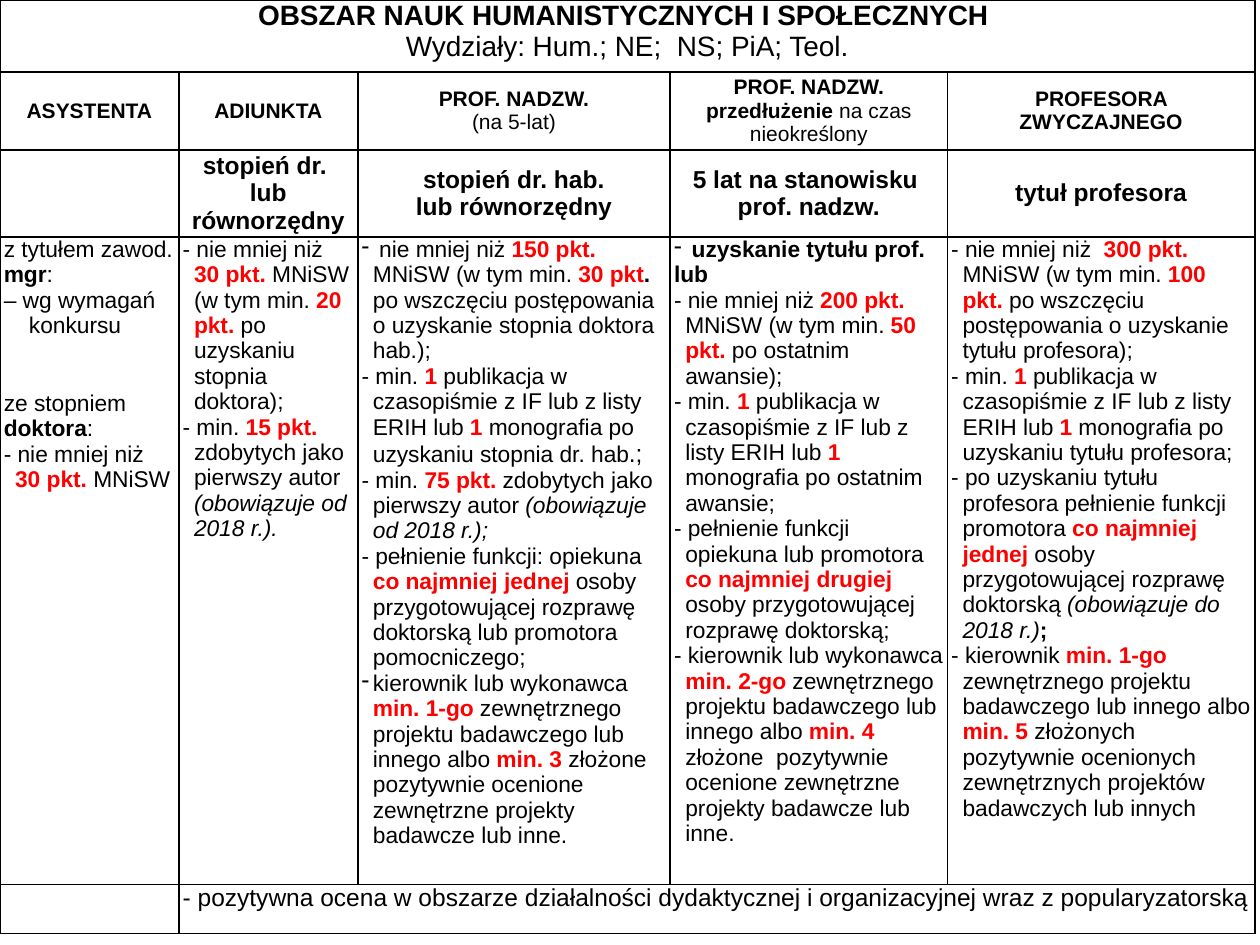
from lxml import etree
from pptx import Presentation
from pptx.dml.color import RGBColor
from pptx.enum.text import MSO_ANCHOR, PP_ALIGN
from pptx.oxml.ns import qn
from pptx.util import Inches, Pt

BLACK = RGBColor(0, 0, 0)
RED = RGBColor(255, 0, 0)
CENTER, LEFT = PP_ALIGN.CENTER, PP_ALIGN.LEFT
MIDDLE, TOP = MSO_ANCHOR.MIDDLE, MSO_ANCHOR.TOP
FONT = "Arial"
COLUMN_WIDTHS = [1.42, 1.42, 2.48, 2.2, 2.44]
ROW_HEIGHTS = [0.57, 0.62, 0.69, 5.14, 0.39]

TITLE = [
    "*OBSZAR NAUK HUMANISTYCZNYCH I SPOŁECZNYCH ",
    "Wydziały: Hum.; NE;  NS; PiA; Teol.",
]
POSITIONS = [
    ["*ASYSTENTA"],
    ["*ADIUNKTA"],
    ["*PROF. NADZW.", "(na 5-lat)"],
    ["*PROF. NADZW.", "*przedłużenie |na czas nieokreślony"],
    ["*PROFESORA ZWYCZAJNEGO"],
]
DEGREES = [
    [],
    ["*stopień dr. ", "*lub równorzędny"],
    ["*stopień dr. hab.", "*lub równorzędny"],
    ["*5 lat na stanowisku ", "*prof. nadzw."],
    ["*tytuł profesora"],
]
ASSISTANT = [
    ("z tytułem zawod. |*mgr|:", {"indent": 0}),
    ("– wg wymagań konkursu", {"indent": 0.2}),
    ("ze stopniem |*doktora|:", {"indent": 0, "before": 30}),
    "- nie mniej niż |!30 pkt. |MNiSW",
]
ADJUNCT = [
    "- nie mniej niż |!30 pkt. |MNiSW (w tym min. |!20 pkt. |po uzyskaniu stopnia doktora);",
    "- min. |!15 pkt.| zdobytych jako pierwszy autor |/(obowiązuje od 2018 r.).",
]
ASSOCIATE = [
    (" nie mniej niż |!150 pkt. |MNiSW (w tym min. |!30 pkt|*. "
     "| po wszczęciu postępowania o uzyskanie stopnia doktora hab.);", {"bullet": "-"}),
    "- min. |!1 |publikacja w czasopiśmie z IF lub z listy ERIH lub |!1 "
    "|monografia po uzyskaniu stopnia dr. hab|+.;",
    "- min.|! 75 pkt.| zdobytych jako pierwszy autor |/(obowiązuje od 2018 r.);",
    "- pełnienie funkcji: opiekuna |!co najmniej jednej "
    "|osoby przygotowującej rozprawę doktorską lub promotora pomocniczego;",
    ("kierownik lub wykonawca |!min. 1-go| zewnętrznego projektu badawczego lub innego albo "
     "|!min. 3 |złożone  pozytywnie ocenione zewnętrzne projekty badawcze lub inne.",
     {"bullet": "-"}),
]
EXTENSION = [
    ("* uzyskanie tytułu prof.", {"bullet": "-"}),
    "*lub",
    "- nie mniej niż |!200 pkt. |MNiSW (w tym min. |!50 pkt. |po ostatnim awansie);",
    "- min. |!1 |publikacja w czasopiśmie z IF lub z listy ERIH lub |!1 "
    "|monografia po ostatnim awansie;",
    "- pełnienie funkcji opiekuna lub promotora |!co najmniej drugiej "
    "|osoby przygotowującej rozprawę doktorską;",
    "- kierownik lub wykonawca |!min. 2-go| zewnętrznego projektu badawczego lub innego albo "
    "|!min. 4 |złożone  pozytywnie ocenione zewnętrzne projekty badawcze lub inne.",
]
FULL_PROFESSOR = [
    "- nie mniej niż  |!300 pkt. |MNiSW (w tym min. |!100 pkt. "
    "|po wszczęciu postępowania o uzyskanie tytułu profesora);",
    "- min. |!1 |publikacja w czasopiśmie z IF lub z listy ERIH lub |!1 "
    "|monografia po uzyskaniu tytułu profesora;",
    "- po uzyskaniu tytułu profesora pełnienie funkcji promotora |!co najmniej jednej "
    "|osoby przygotowującej rozprawę doktorską |/(obowiązuje do 2018 r.)|*;",
    "- kierownik |!min. 1-go| zewnętrznego projektu badawczego lub innego albo "
    "|!min. 5 |złożonych  pozytywnie ocenionych zewnętrznych projektów badawczych lub innych",
]
REQUIREMENTS = [ASSISTANT, ADJUNCT, ASSOCIATE, EXTENSION, FULL_PROFESSOR]
COMMON = [
    "- pozytywna ocena w obszarze działalności dydaktycznej i organizacyjnej "
    "wraz z popularyzatorską",
]


def write_para(para, text, size=13, align=LEFT, indent=0, before=0, bullet=None):
    """Write spans split by |, led by * bold, ! bold red, / italic or + larger."""
    para.alignment = align
    para.space_before = Pt(before)
    properties = para._p.get_or_add_pPr()
    properties.set("marL", str(Inches(indent)))
    properties.set("indent", str(-Inches(indent)))
    if bullet:
        etree.SubElement(properties, qn("a:buChar")).set("char", bullet)
    for part in text.split("|"):
        mark = part[0] if part[0] in "*!/+" else ""
        span = para.add_run()
        span.text = part[len(mark):]
        span.font.name = FONT
        span.font.size = Pt(size + 1 if mark == "+" else size)
        span.font.bold = mark in ("*", "!")
        span.font.italic = mark == "/"
        span.font.color.rgb = RED if mark == "!" else BLACK


def fill_cell(cell, lines, anchor=TOP, **text_format):
    """Write each line as a paragraph; a line may carry its own format."""
    cell.vertical_anchor = anchor
    for number, line in enumerate(lines):
        text, own_format = line if isinstance(line, tuple) else (line, {})
        frame = cell.text_frame
        para = frame.paragraphs[0] if number == 0 else frame.add_paragraph()
        write_para(para, text, **{**text_format, **own_format})


def frame_cell(cell):
    """Give a cell narrow margins, no fill and thin black borders."""
    cell.margin_left = cell.margin_right = Inches(0.03)
    cell.margin_top = cell.margin_bottom = 0
    properties = cell._tc.get_or_add_tcPr()
    for side in ("L", "R", "T", "B"):
        border = etree.SubElement(properties, qn(f"a:ln{side}"), w=str(Pt(1)))
        fill = etree.SubElement(border, qn("a:solidFill"))
        etree.SubElement(fill, qn("a:srgbClr"), val=str(BLACK))
    cell.fill.background()


def add_grid(page):
    """Add the bordered table with its merged title and footer cells."""
    frame = page.shapes.add_table(
        len(ROW_HEIGHTS), len(COLUMN_WIDTHS), 0, 0,
        Inches(sum(COLUMN_WIDTHS)), Inches(sum(ROW_HEIGHTS)))
    table = frame.table
    table.first_row = table.horz_banding = False
    for column, width in zip(table.columns, COLUMN_WIDTHS):
        column.width = Inches(width)
    for row, height in zip(table.rows, ROW_HEIGHTS):
        row.height = Inches(height)
    for cell in table.iter_cells():
        frame_cell(cell)
    table.cell(0, 0).merge(table.cell(0, 4))
    table.cell(4, 1).merge(table.cell(4, 4))
    return table


def main():
    """Build the slide of requirements for academic positions."""
    deck = Presentation()
    deck.slide_width, deck.slide_height = Inches(10), Inches(7.5)
    page = deck.slides.add_slide(deck.slide_layouts[6])
    table = add_grid(page)
    fill_cell(table.cell(0, 0), TITLE, size=16, align=CENTER)
    for column in range(len(COLUMN_WIDTHS)):
        fill_cell(table.cell(1, column), POSITIONS[column], MIDDLE, size=12, align=CENTER)
        fill_cell(table.cell(2, column), DEGREES[column], MIDDLE, size=14, align=CENTER)
        fill_cell(table.cell(3, column), REQUIREMENTS[column], indent=0.09)
    fill_cell(table.cell(4, 1), COMMON, size=14, indent=0.1)
    deck.save("out.pptx")


if __name__ == "__main__":
    main()
